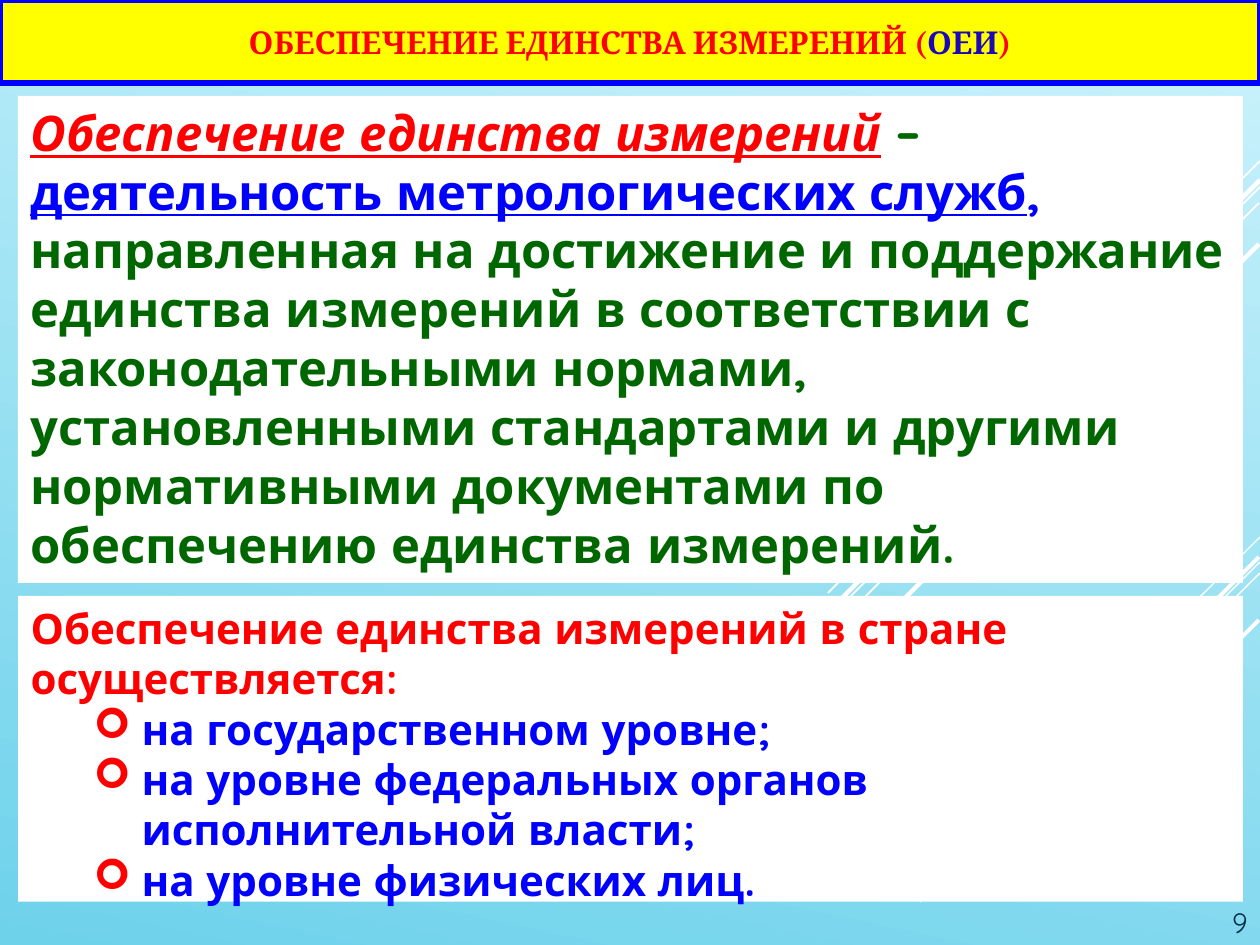
"""Build the slide on ensuring the uniformity of measurements."""
from lxml.etree import SubElement
from pptx import Presentation
from pptx.dml.color import RGBColor
from pptx.enum.dml import MSO_THEME_COLOR
from pptx.enum.shapes import MSO_CONNECTOR
from pptx.enum.text import MSO_ANCHOR, MSO_AUTO_SIZE, PP_ALIGN
from pptx.oxml.ns import qn
from pptx.util import Emu, Pt

PX = 914400 // 126
WIDTH, HEIGHT = 1260, 945

RED = RGBColor(0xFF, 0x00, 0x00)
BLUE = RGBColor(0x00, 0x00, 0xFF)
NAVY = RGBColor(0x1D, 0x08, 0xB8)
GREEN = RGBColor(0x00, 0x66, 0x00)
SLATE = RGBColor(0x0A, 0x30, 0x4A)
YELLOW = RGBColor(0xFF, 0xFF, 0x00)
WHITE = RGBColor(0xFF, 0xFF, 0xFF)
SKY = ((0.04, RGBColor(0xC8, 0xF1, 0xFB)), (1.0, RGBColor(0x6E, 0xD2, 0xEB)))
SKY_ANGLE = 360 - 102

HEADING = [
    ("ОБЕСПЕЧЕНИЕ ЕДИНСТВА ИЗМЕРЕНИЙ (", RED, ""),
    ("ОЕИ", NAVY, ""),
    (")", RED, ""),
]
DEFINITION = [
    ("Обеспечение единства измерений", RED, "iu"),
    (" ", GREEN, "i"),
    ("– ", GREEN, ""),
    ("деятельность метрологических служб", BLUE, "u"),
    (",", BLUE, ""),
    (" направленная на достижение и поддержание единства измерений в соответствии "
     "с законодательными нормами, установленными стандартами и другими "
     "нормативными документами по обеспечению единства измерений.", GREEN, ""),
]
LEVELS_INTRO = "Обеспечение единства измерений в стране осуществляется:"
LEVELS = [
    "на государственном уровне;",
    "на уровне федеральных органов исполнительной власти;",
    "на уровне физических лиц.",
]
PAGE = "9"

HEADING_BOX = (0, 0, WIDTH, 83)
PAGE_BOX = (1142, 853, 118, 92)
DEFINITION_BOX = (18, 96, 1225, 487)
LEVELS_BOX = (18, 596, 1225, 318)
BULLET_INDENT, BULLET_HANG = 111, 48

# Each diagonal: right end x, y, horizontal and vertical run, width in points
DIAGONALS = [
    (1260, 537, 105, 0.75), (1260, 562, 340, 0.75), (1260, 573, 217, 0.75),
    (1259, 557, 198, 2.25), (1259, 620, 144, 2.25),
    (1260, 161, 432, 1), (1261, 186, 664, 1), (1259, 203, 539, 1),
    (1260, 180, 529, 2.5), (1259, 244, 472, 2.5),
]


def px(*lengths):
    return [Emu(length * PX) for length in lengths]


def place(shape, box, fill=None, anchor=MSO_ANCHOR.TOP, fit=MSO_AUTO_SIZE.NONE):
    shape.left, shape.top, shape.width, shape.height = px(*box)
    if fill is not None:
        shape.fill.solid()
        shape.fill.fore_color.rgb = fill
    frame = shape.text_frame
    frame.word_wrap = True
    frame.auto_size = fit
    frame.vertical_anchor = anchor
    return frame


def write(paragraph, runs, size, font="Quicksand", bold=True, align=PP_ALIGN.LEFT):
    paragraph.alignment = align
    paragraph.space_before = Pt(0)
    for text, color, style in runs:
        run = paragraph.add_run()
        run.text = text
        run.font.name = font
        run.font.size = Pt(size)
        run.font.bold = bold
        run.font.italic = "i" in style
        run.font.underline = "u" in style
        run.font.color.rgb = color


def set_bullet(paragraph, char=None):
    properties = paragraph._p.get_or_add_pPr()
    if char is None:
        properties.set("marL", "0")
        properties.set("indent", "0")
        SubElement(properties, qn("a:buNone"))
        return
    properties.set("marL", str(BULLET_INDENT * PX))
    properties.set("indent", str(-BULLET_HANG * PX))
    color = SubElement(properties, qn("a:buClr"))
    SubElement(color, qn("a:srgbClr"), val=str(RED))
    SubElement(properties, qn("a:buFont"), typeface="Wingdings")
    SubElement(properties, qn("a:buChar"), char=char)


def add_diagonal(shapes, x, y, run, width):
    diagonal = shapes.add_connector(MSO_CONNECTOR.STRAIGHT, *px(x, y, x - run, y + run))
    diagonal.line.color.rgb = WHITE
    diagonal.line.width = Pt(width)
    SubElement(diagonal._element.spPr, qn("a:effectLst"))


def main():
    deck = Presentation()
    deck.slide_width, deck.slide_height = px(WIDTH, HEIGHT)
    slide = deck.slides.add_slide(deck.slide_layouts[1])
    shapes = slide.shapes
    heading, levels = slide.placeholders

    sky = slide.background.fill
    sky.gradient()
    sky.gradient_angle = SKY_ANGLE
    for stop, (position, color) in zip(sky.gradient_stops, SKY):
        stop.position = position
        stop.color.rgb = color

    for diagonal in DIAGONALS:
        add_diagonal(shapes, *diagonal)

    shapes._spTree.append(heading._element)
    frame = place(heading, HEADING_BOX, YELLOW, MSO_ANCHOR.MIDDLE)
    heading.line.color.rgb = BLUE
    heading.line.width = Pt(3)
    write(frame.paragraphs[0], HEADING, 18, "Cambria", align=PP_ALIGN.CENTER)

    page = shapes.add_textbox(*px(*PAGE_BOX))
    frame = place(page, PAGE_BOX, anchor=MSO_ANCHOR.BOTTOM)
    write(frame.paragraphs[0], [(PAGE, SLATE, "")], 16, bold=False, align=PP_ALIGN.RIGHT)

    definition = shapes.add_textbox(*px(*DEFINITION_BOX))
    frame = place(definition, DEFINITION_BOX, WHITE, fit=MSO_AUTO_SIZE.SHAPE_TO_FIT_TEXT)
    write(frame.paragraphs[0], DEFINITION, 28)

    shapes._spTree.append(levels._element)
    frame = place(levels, LEVELS_BOX, WHITE, fit=MSO_AUTO_SIZE.SHAPE_TO_FIT_TEXT)
    intro = frame.paragraphs[0]
    write(intro, [(LEVELS_INTRO, RED, "")], 24)
    set_bullet(intro)
    for level in LEVELS:
        item = frame.add_paragraph()
        item.level = 1
        write(item, [(level, BLUE, "")], 24)
        set_bullet(item, "➢")

    deck.save("out.pptx")


if __name__ == "__main__":
    main()
